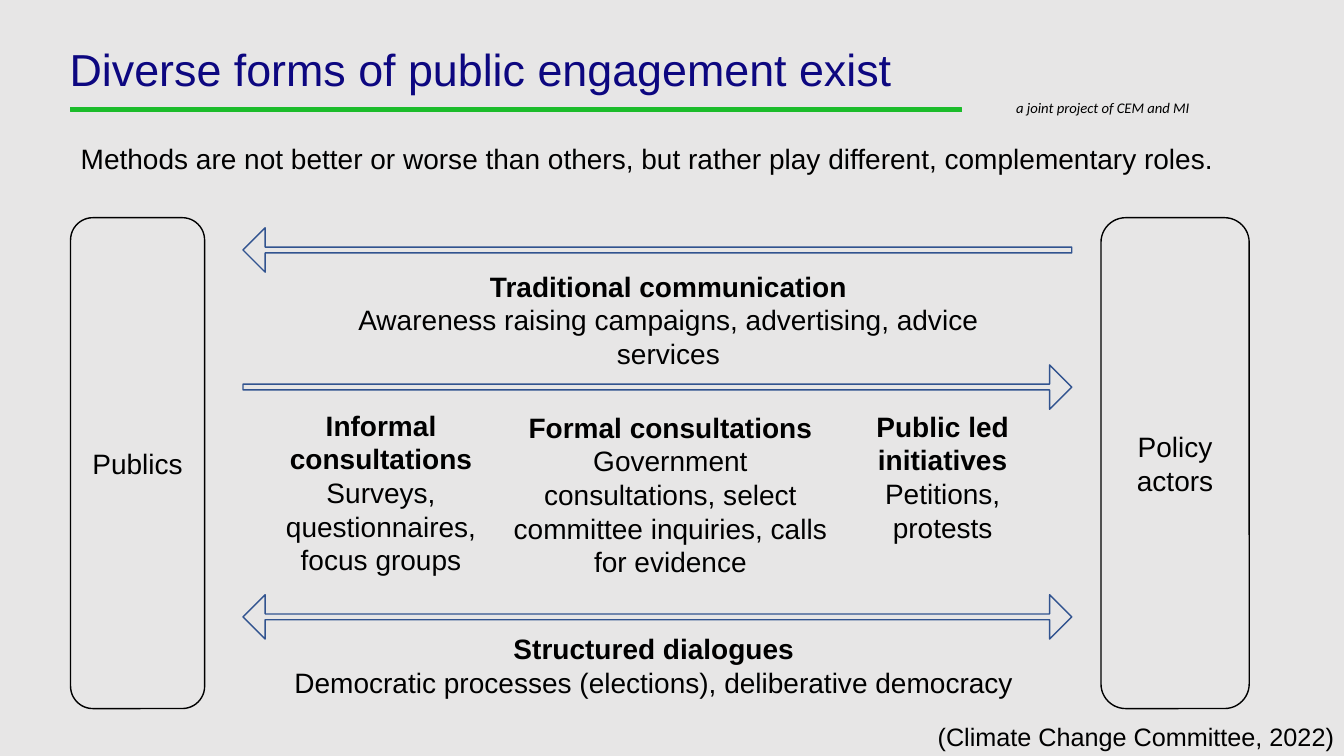
from dataclasses import dataclass

import lxml.etree
import pptx
import pptx.dml.color
import pptx.enum.shapes
import pptx.enum.text
import pptx.oxml.ns
import pptx.util

Inches = pptx.util.Inches
Pt = pptx.util.Pt
RGBColor = pptx.dml.color.RGBColor
Shape = pptx.enum.shapes.MSO_SHAPE
Align = pptx.enum.text.PP_ALIGN
Anchor = pptx.enum.text.MSO_ANCHOR

BACKGROUND = RGBColor(0xE7, 0xE6, 0xE6)
GREEN = RGBColor(0x1C, 0xBC, 0x2B)
NAVY = RGBColor(0x0D, 0x07, 0x80)
BLUE = RGBColor(0x31, 0x53, 0x8F)
BLACK = RGBColor(0x00, 0x00, 0x00)

ARROW_LEFT, ARROW_WIDTH, ARROW_HEIGHT = 2.41, 8.22, 0.44
ACTOR_TOP, ACTOR_HEIGHT = 2.16, 4.87


@dataclass
class Actor:
    name: str
    left: float
    width: float


@dataclass
class Arrow:
    kind: Shape
    top: float
    shaft: float
    rotation: int = 0


@dataclass
class Method:
    heading: str
    examples: str
    left: float
    top: float
    width: float
    height: float


ACTORS = [Actor("Publics", 0.7, 1.33), Actor("Policy actors", 10.92, 1.47)]

ARROWS = [
    Arrow(Shape.RIGHT_ARROW, 2.26, 0.13, 180),
    Arrow(Shape.RIGHT_ARROW, 3.62, 0.13),
    Arrow(Shape.LEFT_RIGHT_ARROW, 5.9, 0.13),
]

METHODS = [
    Method("Traditional communication",
           "Awareness raising campaigns, advertising, advice services",
           2.91, 2.62, 7.44, 0.77),
    Method("Public led initiatives", "Petitions, protests", 8.35, 4.01, 2, 1.45),
    Method("Informal consultations", "Surveys, questionnaires, focus groups",
           2.48, 4, 2.6, 1.78),
    Method("Formal consultations",
           "Government consultations, select committee inquiries, calls for evidence",
           4.9, 4.02, 3.5, 1.78),
    Method("Structured dialogues",
           "Democratic processes (elections), deliberative democracy",
           2.81, 6.22, 7.35, 0.77),
]


def format_paragraph(paragraph, size: float = 20, color: RGBColor = BLACK,
                     align: Align = Align.CENTER, font: str = "Arial",
                     bold: bool = False, italic: bool = False) -> None:
    paragraph.alignment = align
    paragraph.font.name = font
    paragraph.font.size = Pt(size)
    paragraph.font.color.rgb = color
    paragraph.font.bold = bold
    paragraph.font.italic = italic


def add_shape(page, kind: Shape, left: float, top: float, width: float,
              height: float, line: RGBColor, weight: float = 1):
    shape = page.shapes.add_shape(kind, Inches(left), Inches(top),
                                  Inches(width), Inches(height))
    shape.shadow.inherit = False
    shape.fill.background()
    shape.line.color.rgb = line
    shape.line.width = Pt(weight)
    return shape


def add_text(page, left: float, top: float, width: float, height: float):
    box = page.shapes.add_textbox(Inches(left), Inches(top),
                                  Inches(width), Inches(height))
    box.text_frame.word_wrap = True
    return box.text_frame


def fill_placeholder(box, text: str, left: float, top: float,
                     width: float, height: float):
    box.left, box.top = Inches(left), Inches(top)
    box.width, box.height = Inches(width), Inches(height)
    frame = box.text_frame
    frame.text = text
    frame.vertical_anchor = Anchor.TOP
    frame.auto_size = pptx.enum.text.MSO_AUTO_SIZE.NONE
    frame.margin_left = frame.margin_right = 0
    frame.margin_top = frame.margin_bottom = 0
    return frame.paragraphs[0]


def add_header(page) -> None:
    bar = add_shape(page, Shape.RECTANGLE, 0.7, 1.07, 8.84, 0.04, GREEN, 0.75)
    bar.fill.solid()
    bar.fill.fore_color.rgb = GREEN

    tagline = add_text(page, 9.98, 0.93, 2.43, 0.28)
    tagline.text = "a joint project of CEM and MI"
    format_paragraph(tagline.paragraphs[0], 10.5, align=Align.LEFT,
                     font="Calibri", italic=True)

    title = fill_placeholder(page.shapes.title,
                             "Diverse forms of public engagement exist",
                             0.69, 0.47, 8.86, 0.48)
    title.line_spacing = 0.9
    format_paragraph(title, 32, NAVY, Align.LEFT)

    summary = fill_placeholder(
        page.placeholders[1],
        "Methods are not better or worse than others, but rather play "
        "different, complementary roles.",
        0.69, 1.37, 11.7, 1.25)
    summary.line_spacing = 1.1
    summary.space_before = summary.space_after = Pt(3)
    properties = summary._p.get_or_add_pPr()
    properties.set("marL", str(Inches(0.11)))
    properties.set("indent", "0")
    lxml.etree.SubElement(properties, pptx.oxml.ns.qn("a:buNone"))
    format_paragraph(summary, align=Align.LEFT)


def add_actor(page, actor: Actor) -> None:
    box = add_shape(page, Shape.ROUNDED_RECTANGLE, actor.left, ACTOR_TOP,
                    actor.width, ACTOR_HEIGHT, BLACK)
    box.text_frame.text = actor.name
    box.text_frame.vertical_anchor = Anchor.MIDDLE
    format_paragraph(box.text_frame.paragraphs[0])


def add_arrow(page, arrow: Arrow) -> None:
    shape = add_shape(page, arrow.kind, ARROW_LEFT, arrow.top,
                      ARROW_WIDTH, ARROW_HEIGHT, BLUE)
    shape.fill.solid()
    shape.fill.fore_color.rgb = BACKGROUND
    shape.adjustments[0] = arrow.shaft
    shape.rotation = arrow.rotation


def add_method(page, method: Method) -> None:
    frame = add_text(page, method.left, method.top, method.width, method.height)
    frame.text = f"{method.heading}\n{method.examples}"
    heading, examples = frame.paragraphs
    format_paragraph(heading, bold=True)
    format_paragraph(examples)


def main() -> None:
    deck = pptx.Presentation()
    deck.slide_width, deck.slide_height = Inches(13.33), Inches(7.5)
    page = deck.slides.add_slide(deck.slide_layouts[1])
    page.background.fill.solid()
    page.background.fill.fore_color.rgb = BACKGROUND

    add_header(page)
    for actor in ACTORS:
        add_actor(page, actor)
    for arrow in ARROWS:
        add_arrow(page, arrow)
    for method in METHODS:
        add_method(page, method)

    citation = add_text(page, 6.02, 7.11, 7.31, 0.4)
    citation.text = "(Climate Change Committee, 2022)"
    citation.vertical_anchor = Anchor.MIDDLE
    format_paragraph(citation.paragraphs[0], 18, align=Align.RIGHT)

    deck.save("out.pptx")


if __name__ == "__main__":
    main()
